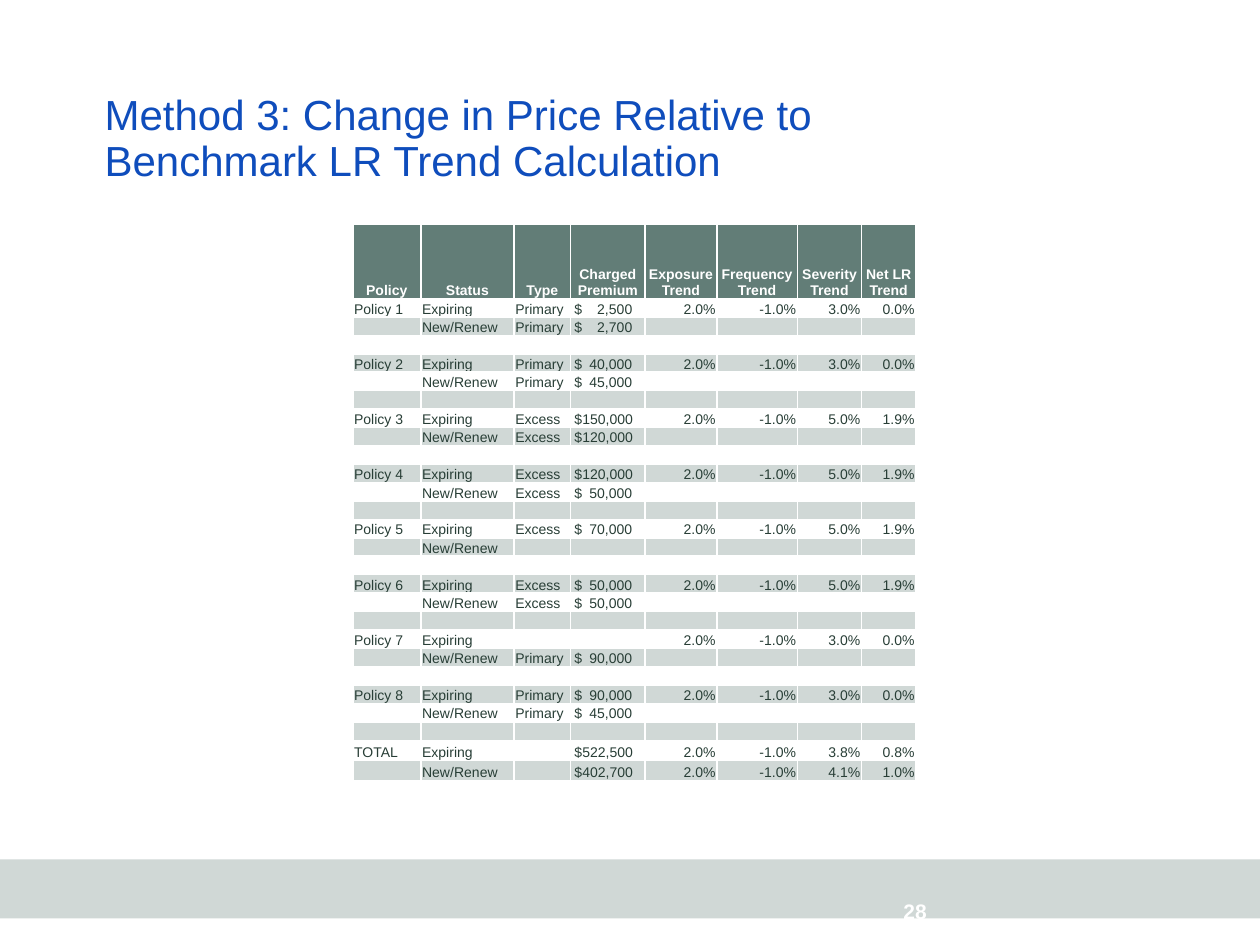
from pptx import Presentation
from pptx.dml.color import RGBColor
from pptx.enum.shapes import MSO_SHAPE as Shape
from pptx.enum.text import MSO_ANCHOR as Anchor, MSO_AUTO_SIZE as AutoSize, PP_ALIGN as Align
from pptx.oxml.ns import qn
from pptx.util import Inches, Pt
from lxml.etree import SubElement


def color(value):
    return RGBColor.from_string(value)


def style(paragraph, size, ink, bold=False, align=Align.LEFT):
    paragraph.alignment = align
    font = paragraph.font
    font.name, font.size, font.bold = "Arial", Pt(size), bold
    font.color.rgb = color(ink)


BLUE, GREEN, PALE, DARK, WHITE = "0F4DBC", "627D77", "D0D8D6", "283E36", "FFFFFF"

presentation = Presentation()
presentation.slide_width, presentation.slide_height = Inches(10), Inches(7.5)
slide = presentation.slides.add_slide(presentation.slide_layouts[5])

footer = slide.shapes.add_shape(Shape.RECTANGLE, 0, Inches(6.82), presentation.slide_width, Inches(0.47))
footer.shadow.inherit = False
footer.fill.solid()
footer.fill.fore_color.rgb = color(PALE)
footer.line.fill.background()

title = slide.shapes.title
title.left, title.top, title.width, title.height = map(Inches, (0.83, 0.52, 6.38, 0.95))
page_number = slide.shapes.add_textbox(Inches(7.17), Inches(6.83), Inches(2.33), Inches(0.5))
for shape, text, size, ink, bold in (
    (title, "Method 3: Change in Price Relative to Benchmark LR Trend Calculation", 24, BLUE, False),
    (page_number, "28", 12, WHITE, True),
):
    frame = shape.text_frame
    frame.text = text
    frame.word_wrap = True
    frame.auto_size = AutoSize.NONE
    frame.vertical_anchor = Anchor.BOTTOM
    frame.margin_left = frame.margin_right = frame.margin_top = frame.margin_bottom = 0
    style(frame.paragraphs[0], size, ink, bold)
title.text_frame.paragraphs[0].line_spacing = 0.9

headers = ["Policy", "Status", "Type", "Charged Premium", "Exposure Trend",
           "Frequency Trend", "Severity Trend", "Net LR Trend"]
policies = [
    ("Policy 1", "Primary", "2,500", "Primary", "2,700", "3.0%", "0.0%"),
    ("Policy 2", "Primary", "40,000", "Primary", "45,000", "3.0%", "0.0%"),
    ("Policy 3", "Excess", "150,000", "Excess", "120,000", "5.0%", "1.9%"),
    ("Policy 4", "Excess", "120,000", "Excess", "50,000", "5.0%", "1.9%"),
    ("Policy 5", "Excess", "70,000", "", "", "5.0%", "1.9%"),
    ("Policy 6", "Excess", "50,000", "Excess", "50,000", "5.0%", "1.9%"),
    ("Policy 7", "", "", "Primary", "90,000", "3.0%", "0.0%"),
    ("Policy 8", "Primary", "90,000", "Primary", "45,000", "3.0%", "0.0%"),
]
rows = [headers]
for policy, old_type, old_premium, new_type, new_premium, severity, net in policies:
    rows += [
        [policy, "Expiring", old_type, old_premium, "2.0%", "-1.0%", severity, net],
        ["", "New/Renew", new_type, new_premium, "", "", "", ""],
        [""] * len(headers),
    ]
rows += [
    ["TOTAL", "Expiring", "", "522,500", "2.0%", "-1.0%", "3.8%", "0.8%"],
    ["", "New/Renew", "", "402,700", "2.0%", "-1.0%", "4.1%", "1.0%"],
]

column_widths = [0.54, 0.74, 0.45, 0.59, 0.57, 0.64, 0.51, 0.43]
table_height, header_height, total_height = 4.42, 0.59, 0.16
policy_height = (table_height - header_height - 2 * total_height) / (3 * len(policies))
row_heights = [header_height] + [policy_height] * 3 * len(policies) + [total_height] * 2
PREMIUM = headers.index("Charged Premium")

table = slide.shapes.add_table(len(rows), len(headers), Inches(2.8), Inches(1.78),
                               Inches(sum(column_widths)), Inches(table_height)).table
for column, width in zip(table.columns, column_widths):
    column.width = Inches(width)
for row, height in zip(table.rows, row_heights):
    row.height = Inches(height)

for row_index, values in enumerate(rows):
    is_header = row_index == 0
    for column_index, value in enumerate(values):
        cell = table.cell(row_index, column_index)
        cell.vertical_anchor = Anchor.BOTTOM
        cell.margin_left = cell.margin_right = cell.margin_top = Inches(0.01)
        cell.margin_bottom = 0
        cell.fill.solid()
        cell.fill.fore_color.rgb = color(GREEN if is_header else WHITE if row_index % 2 else PALE)
        paragraph = cell.text_frame.paragraphs[0]
        if column_index == PREMIUM and value and not is_header:
            cell.margin_left = Inches(0.03)
            fills_column = len(value) == len("100,000")
            value = f"${value}" if fills_column else f"$\t{value}"
            if not fills_column:
                tabs = SubElement(paragraph._p.get_or_add_pPr(), qn("a:tabLst"))
                SubElement(tabs, qn("a:tab"), pos=str(Inches(0.46)), algn="r")
        if value:
            paragraph.add_run().text = value
        else:
            paragraph._p.get_or_add_endParaRPr().set("sz", "800")
        align = Align.CENTER if is_header else Align.RIGHT if column_index > PREMIUM else Align.LEFT
        style(paragraph, 8, WHITE if is_header else DARK, is_header, align)

presentation.save("out.pptx")
